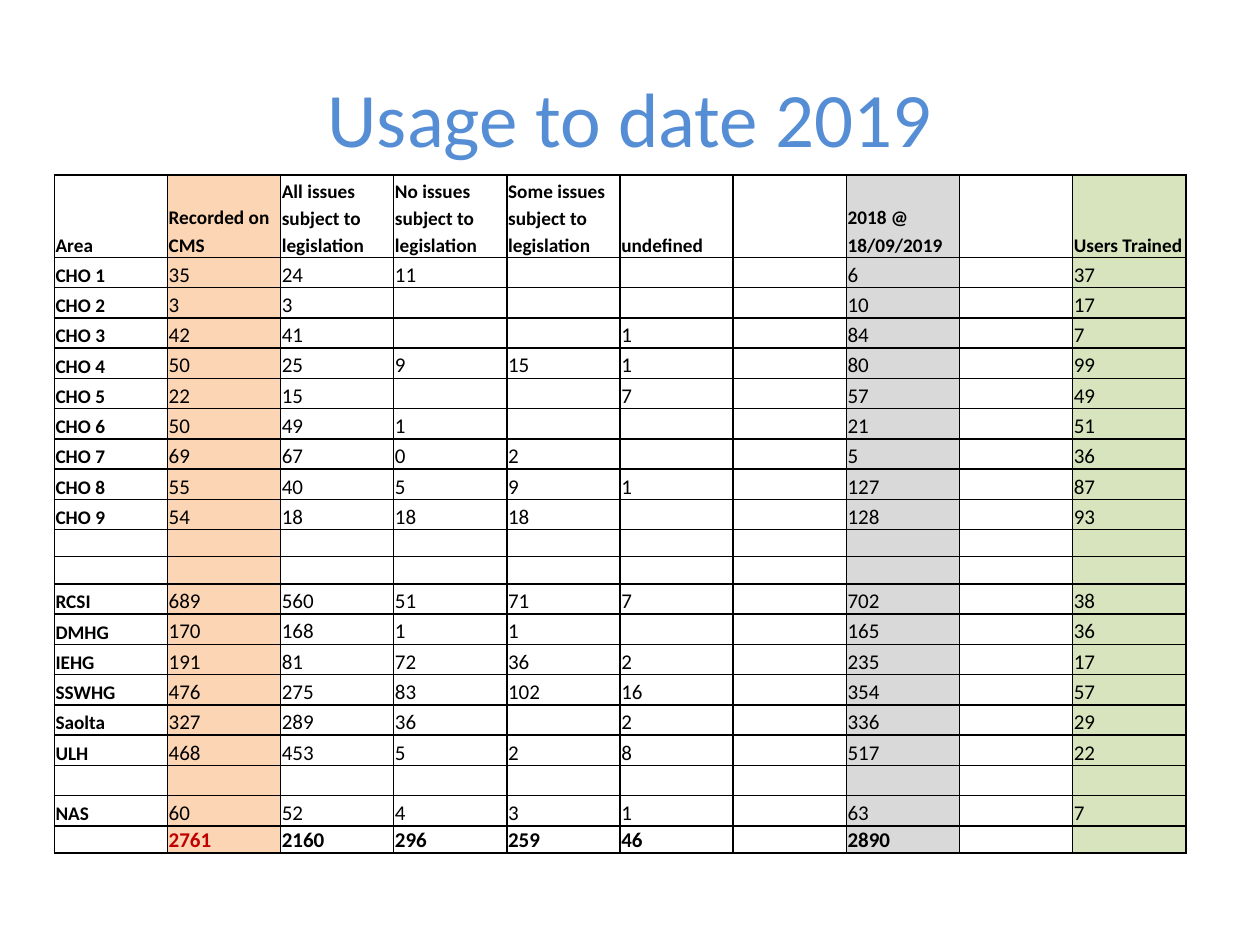
from lxml.etree import SubElement
from pptx import Presentation
from pptx.dml.color import RGBColor
from pptx.enum.text import MSO_ANCHOR as Anchor, PP_ALIGN as Align
from pptx.oxml.ns import qn
from pptx.util import Pt

TITLE = "Usage to date 2019"
HEADER = ["Area", "Recorded on CMS", "All issues subject to legislation",
          "No issues subject to legislation", "Some issues subject to legislation",
          "undefined", "", "2018 @\v18/09/2019", "", "Users Trained"]
USAGE = [
    ["CHO 1", 35, 24, 11, "", "", "", 6, "", 37],
    ["CHO 2", 3, 3, "", "", "", "", 10, "", 17],
    ["CHO 3", 42, 41, "", "", 1, "", 84, "", 7],
    ["CHO 4", 50, 25, 9, 15, 1, "", 80, "", 99],
    ["CHO 5", 22, 15, "", "", 7, "", 57, "", 49],
    ["CHO 6", 50, 49, 1, "", "", "", 21, "", 51],
    ["CHO 7", 69, 67, 0, 2, "", "", 5, "", 36],
    ["CHO 8", 55, 40, 5, 9, 1, "", 127, "", 87],
    ["CHO 9", 54, 18, 18, 18, "", "", 128, "", 93],
    [""] * 10,
    [""] * 10,
    ["RCSI", 689, 560, 51, 71, 7, "", 702, "", 38],
    ["DMHG", 170, 168, 1, 1, "", "", 165, "", 36],
    ["IEHG", 191, 81, 72, 36, 2, "", 235, "", 17],
    ["SSWHG", 476, 275, 83, 102, 16, "", 354, "", 57],
    ["Saolta", 327, 289, 36, "", 2, "", 336, "", 29],
    ["ULH", 468, 453, 5, 2, 8, "", 517, "", 22],
    [""] * 10,
    ["NAS", 60, 52, 4, 3, 1, "", 63, "", 7],
]
TOTALS = ["", 2761, 2160, 296, 259, 46, "", 2890, "", ""]
ROWS = [HEADER, *USAGE, TOTALS]
LAST = len(ROWS) - 1
COLUMN_FILLS = {1: "FCD5B5", 7: "D9D9D9", 9: "D7E4BD"}

FONT = "Calibri"
TABLE_LEFT, TABLE_TOP, COLUMN_WIDTH = 31, 100, 64.66
HEADER_HEIGHT, ROW_HEIGHT, NAS_GAP_HEIGHT = 47, 15.5, 17.3
NAS_GAP_ROW = 18


def rgb(value):
    return RGBColor.from_string(value)


def style(paragraph, size, color, bold=False):
    font = paragraph.font
    font.name, font.size, font.bold = FONT, Pt(size), bold
    font.color.rgb = rgb(color)


def add_borders(cell):
    properties = cell._tc.get_or_add_tcPr()
    for side in ("lnL", "lnR", "lnT", "lnB"):
        line = SubElement(properties, qn(f"a:{side}"), w=str(Pt(1)))
        fill = SubElement(line, qn("a:solidFill"))
        SubElement(fill, qn("a:srgbClr"), val="000000")


def fill_cell(cell, value, row, column):
    cell.margin_left = cell.margin_right = cell.margin_top = Pt(0.72)
    cell.margin_bottom = 0
    cell.vertical_anchor = Anchor.BOTTOM
    add_borders(cell)
    if column in COLUMN_FILLS:
        cell.fill.solid()
        cell.fill.fore_color.rgb = rgb(COLUMN_FILLS[column])
    else:
        cell.fill.background()

    cell.text = str(value)
    paragraph = cell.text_frame.paragraphs[0]
    if value == "":
        style(paragraph, 10, "000000")
        return
    is_label = row == 0 or column == 0
    is_grand_total = row == LAST and column == 1
    style(paragraph, 11 if is_label else 12,
          "C00000" if is_grand_total else "000000", is_label or row == LAST)
    if row < LAST:
        paragraph.line_spacing = 1.15
        paragraph.space_after = Pt(10)


prs = Presentation()
prs.slide_width, prs.slide_height = Pt(720), Pt(540)
slide = prs.slides.add_slide(prs.slide_layouts[6])

title = slide.shapes.add_textbox(Pt(36), Pt(21.6), Pt(648), Pt(90)).text_frame
title.word_wrap = True
title.vertical_anchor = Anchor.MIDDLE
title.text = TITLE
title.paragraphs[0].alignment = Align.CENTER
style(title.paragraphs[0], 44, "558ED5")

heights = [HEADER_HEIGHT] + [ROW_HEIGHT] * LAST
heights[NAS_GAP_ROW] = NAS_GAP_HEIGHT
table = slide.shapes.add_table(
    len(ROWS), len(HEADER), Pt(TABLE_LEFT), Pt(TABLE_TOP),
    Pt(COLUMN_WIDTH * len(HEADER)), Pt(sum(heights))).table
table.first_row = table.horz_banding = False
for column in table.columns:
    column.width = Pt(COLUMN_WIDTH)
for r, values in enumerate(ROWS):
    table.rows[r].height = Pt(heights[r])
    for c, value in enumerate(values):
        fill_cell(table.cell(r, c), value, r, c)

prs.save("out.pptx")
